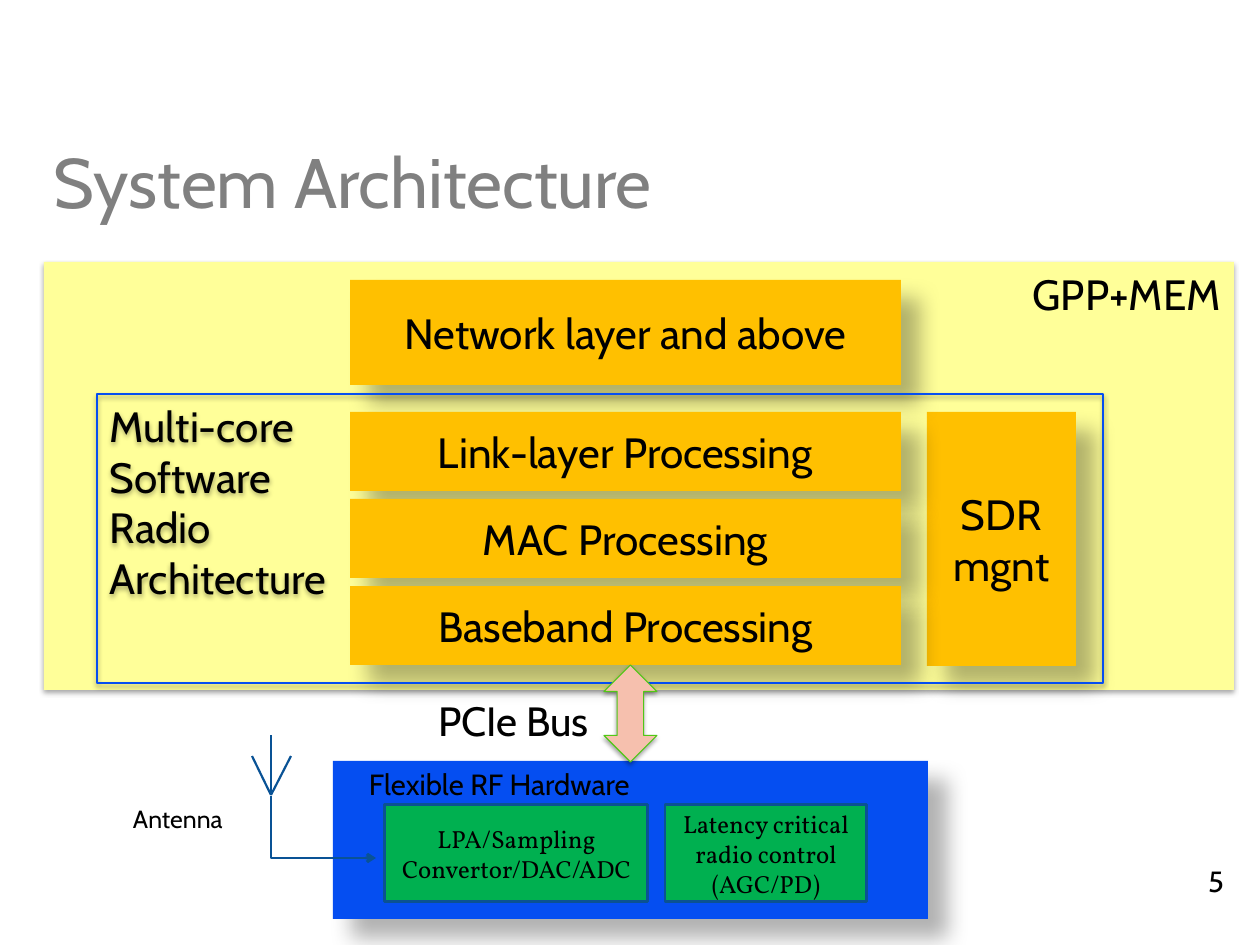
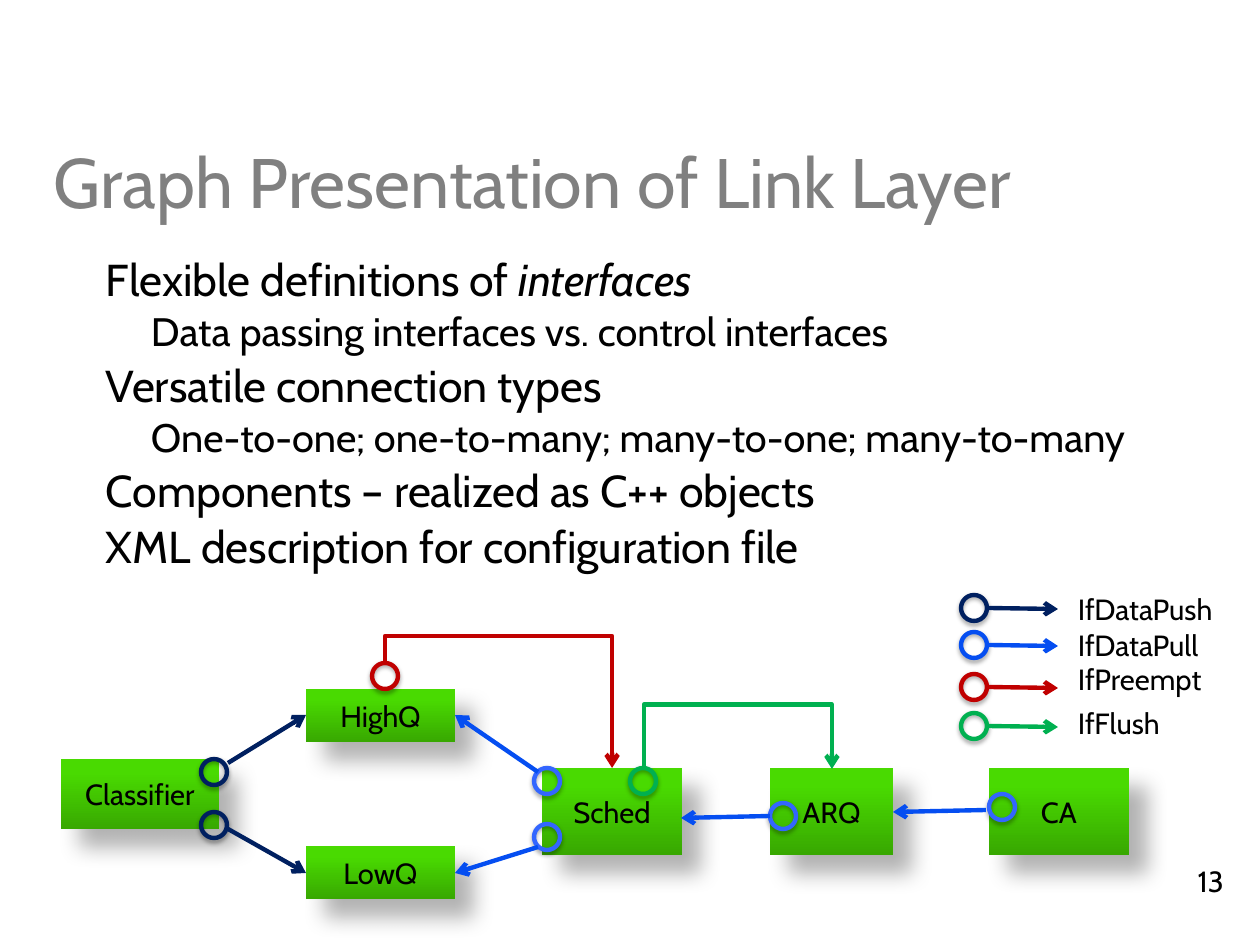
"""Build two slides on a software radio: system architecture and link-layer graph."""
from lxml.etree import SubElement
from pptx import Presentation
from pptx.dml.color import RGBColor
from pptx.enum.shapes import MSO_CONNECTOR as Wire, MSO_SHAPE as Preset
from pptx.enum.text import MSO_ANCHOR as Anchor, MSO_AUTO_SIZE as AutoSize, PP_ALIGN as Align
from pptx.oxml.ns import qn
from pptx.util import Pt

PX = 914400 / 105
TITLE_ONLY = 5
SANS, SERIF = "Cabin", "Vollkorn"

BLACK = RGBColor(0x00, 0x00, 0x00)
GRAY = RGBColor(0x80, 0x80, 0x80)
CREAM = RGBColor(0xFF, 0xFF, 0x99)
AMBER = RGBColor(0xFF, 0xC0, 0x00)
BLUE = RGBColor(0x05, 0x4E, 0xF1)
RING_BLUE = RGBColor(0x33, 0x66, 0xFF)
NAVY = RGBColor(0x00, 0x20, 0x60)
RED = RGBColor(0xC0, 0x00, 0x00)
GREEN = RGBColor(0x00, 0xB0, 0x50)
CHIP_EDGE = RGBColor(0x0B, 0x52, 0x92)
ANTENNA = RGBColor(0x09, 0x52, 0x95)
PINK = RGBColor(0xF6, 0xC0, 0xAE)
LIME_EDGE = RGBColor(0x51, 0xC7, 0x16)
LIME_DARK = RGBColor(0x38, 0xA8, 0x01)
LIME = RGBColor(0x49, 0xDA, 0x01)
LIME_GRADIENT = (LIME_DARK, LIME)

SOFT = dict(alpha=35, blur=3.1, dist=1.8, angle=90)
DEEP = dict(alpha=30, blur=15, dist=18, angle=45)
RING = 26

LAYERS = [
    ("Network layer and above", 280, 105),
    ("Link-layer Processing", 412, 79),
    ("MAC Processing", 499, 79),
    ("Baseband Processing", 586, 79),
]
CHIPS = [
    ("LPA/Sampling Convertor/DAC/ADC", (385, 805, 263, 97)),
    ("Latency critical radio control (AGC/PD)", (665, 805, 202, 97)),
]
ANTENNA_LINES = [((252, 756), (271, 795)), ((271, 735), (271, 794)), ((291, 756), (271, 795))]
POINTS = [
    (0, "Flexible definitions of ", "interfaces"),
    (1, "Data passing interfaces vs. control interfaces", ""),
    (0, "Versatile connection types", ""),
    (1, "One-to-one; one-to-many; many-to-one; many-to-many", ""),
    (0, "Components – realized as C++ objects", ""),
    (0, "XML description for configuration file", ""),
]
POINT_LEVELS = [dict(indent=53, size=30.6, before=9), dict(indent=98, size=27.2, before=8)]
BLOCKS = [
    ("Classifier", (61, 759, 158, 70)),
    ("HighQ", (306, 689, 149, 53)),
    ("LowQ", (306, 846, 149, 53)),
    ("Sched", (542, 768, 140, 87)),
    ("ARQ", (770, 768, 123, 87)),
    ("CA", (989, 768, 140, 87)),
]
LINKS = [
    ((201, 812), NAVY, (228, 829), (306, 873), NAVY),
    ((201, 759), NAVY, (228, 763), (306, 715), NAVY),
    ((534, 768), RING_BLUE, (538, 772), (455, 715), BLUE),
    ((534, 824), RING_BLUE, (538, 847), (455, 873), BLUE),
    ((770, 803), RING_BLUE, (770, 816), (681, 818), BLUE),
    ((989, 794), RING_BLUE, (986, 810), (893, 812), BLUE),
]
LOOPS = [
    ((630, 768), (644, 768), (832, 769), 704, GREEN),
    ((372, 663), (385, 663), (612, 768), 636, RED),
]
LEGEND = [
    ("IfDataPush", NAVY, 595, 586),
    ("IfDataPull", BLUE, 632, 622),
    ("IfPreempt", RED, 674, 656),
    ("IfFlush", GREEN, 713, 700),
]


def px(*lengths):
    return [round(length * PX) for length in lengths]


def add_span(para, text, *, size, color=BLACK, font=SANS, italic=False):
    span = para.add_run()
    span.text = text
    span.font.size = Pt(size)
    span.font.name = font
    span.font.italic = italic
    span.font.color.rgb = color


def set_frame(frame, inset=(13, 6), anchor=Anchor.TOP):
    frame.word_wrap = True
    frame.auto_size = AutoSize.NONE
    frame.vertical_anchor = anchor
    frame.margin_left, frame.margin_top = px(*inset)
    frame.margin_right, frame.margin_bottom = px(*inset)


def write(frame, text, align=Align.LEFT, spacing=None, **style):
    for index, line in enumerate(text.split("\n")):
        para = frame.add_paragraph() if index else frame.paragraphs[0]
        para.alignment = align
        para.line_spacing = spacing
        add_span(para, line, **style)


def add_label(page, text, at, inset=(10, 5), **style):
    box = page.shapes.add_textbox(*px(*at))
    set_frame(box.text_frame, inset)
    write(box.text_frame, text, **style)


def cast_shadow(shape, alpha, blur, dist, angle):
    effects = shape._element.spPr.find(qn("a:effectLst"))
    shadow = SubElement(effects, qn("a:outerShdw"), blurRad=str(Pt(blur)), dist=str(Pt(dist)),
                        dir=str(angle * 60000), algn="ctr", rotWithShape="0")
    color = SubElement(shadow, qn("a:srgbClr"), val=str(BLACK))
    SubElement(color, qn("a:alpha"), val=str(alpha * 1000))


def paint(fill, color):
    if color is None:
        fill.background()
    elif color is LIME_GRADIENT:
        fill.gradient()
        fill.gradient_angle = 90
        for stop, place, shade in zip(fill.gradient_stops, (0, 0.8), color):
            stop.position = place
            stop.color.rgb = shade
    else:
        fill.solid()
        fill.fore_color.rgb = color


def add_box(page, at, fill=None, line=None, width=1.5, shadow=None, preset=Preset.RECTANGLE,
            text="", anchor=Anchor.MIDDLE, align=Align.CENTER, **style):
    box = page.shapes.add_shape(preset, *px(*at))
    paint(box.fill, fill)
    paint(box.line.fill, line)
    if line is not None:
        box.line.width = Pt(width)
    box.shadow.inherit = False
    if shadow:
        cast_shadow(box, **shadow)
    if text:
        set_frame(box.text_frame, anchor=anchor)
        write(box.text_frame, text, align=align, **style)


def add_ring(page, corner, color):
    add_box(page, (*corner, RING, RING), line=color, width=3, shadow=SOFT, preset=Preset.OVAL)


def add_wire(page, start, end, color, width=3, arrow=True, kind=Wire.STRAIGHT):
    wire = page.shapes.add_connector(kind, *px(*start, *end))
    wire.line.color.rgb = color
    wire.line.width = Pt(width)
    properties = wire._element.spPr
    if arrow:
        SubElement(properties.find(qn("a:ln")), qn("a:tailEnd"), type="arrow")
    SubElement(properties, qn("a:effectLst"))
    return wire


def set_bend(wire, share):
    values = wire._element.spPr.find(qn("a:prstGeom")).find(qn("a:avLst"))
    SubElement(values, qn("a:gd"), name="adj1", fmla=f"val {round(share * 100000)}")


def add_loop(page, start, end, top, color):
    wire = add_wire(page, start, end, color, kind=Wire.ELBOW)
    run, drop = end[0] - start[0], end[1] - start[1]
    middle_x, middle_y = (start[0] + end[0]) / 2, (start[1] + end[1]) / 2
    wire.left, wire.top = px(middle_x - drop / 2, middle_y - run / 2)
    wire.width, wire.height = px(drop, run)
    frame = wire._element.spPr.find(qn("a:xfrm"))
    frame.set("rot", str(270 * 60000))
    frame.set("flipH", "1")
    set_bend(wire, (top - start[1]) / drop)


def add_page(deck, title, number):
    page = deck.slides.add_slide(deck.slide_layouts[TITLE_ONLY])
    heading = page.shapes.title
    heading.left, heading.top, heading.width, heading.height = px(54, 148, 1155, 77)
    set_frame(heading.text_frame, inset=(0, 0))
    write(heading.text_frame, title, spacing=0.9, size=48, color=GRAY)
    add_label(page, number, (974, 857, 263, 63), inset=(13, 6), align=Align.RIGHT, size=20)
    return page


def add_points(page):
    box = page.shapes.add_textbox(*px(53, 262, 1155, 333))
    frame = box.text_frame
    set_frame(frame, inset=(0, 0))
    for index, (level, plain, slanted) in enumerate(POINTS):
        look = POINT_LEVELS[level]
        para = frame.add_paragraph() if index else frame.paragraphs[0]
        para.line_spacing = 0.8
        para.space_before = Pt(look["before"] if index else 0)
        para._p.get_or_add_pPr().set("marL", str(px(look["indent"])[0]))
        add_span(para, plain, size=look["size"])
        if slanted:
            add_span(para, slanted, size=look["size"], italic=True)


def build_architecture(deck):
    page = add_page(deck, "System Architecture", "5")
    add_box(page, (44, 262, 1190, 428), CREAM, shadow=SOFT, text="GPP+MEM",
            anchor=Anchor.TOP, align=Align.RIGHT, size=29)
    add_box(page, (333, 761, 595, 158), BLUE, shadow=DEEP)
    add_label(page, "PCIe Bus", (428, 691, 195, 60), size=28)
    for text, at in CHIPS:
        add_box(page, at, GREEN, CHIP_EDGE, width=2, text=text, size=17, font=SERIF)
    add_label(page, "Antenna", (120, 798, 131, 43), inset=(13, 6), size=17)
    feed = add_wire(page, (271, 796), (376, 858), ANTENNA, width=2, kind=Wire.ELBOW)
    set_bend(feed, 0)
    for start, end in ANTENNA_LINES:
        add_wire(page, start, end, ANTENNA, width=1.5, arrow=False)
    add_box(page, (927, 412, 149, 254), AMBER, shadow=DEEP, text="SDR mgnt", size=29)
    add_label(page, "Flexible RF Hardware", (359, 761, 307, 46), size=20)
    for text, top, height in LAYERS:
        add_box(page, (350, top, 551, height), AMBER, shadow=DEEP, text=text, size=29)
    add_box(page, (97, 394, 1006, 289), line=BLUE, shadow=SOFT,
            text="Multi-core\nSoftware\nRadio\nArchitecture",
            anchor=Anchor.TOP, align=Align.LEFT, size=29)
    add_box(page, (604, 665, 53, 97), PINK, LIME_EDGE, width=0.75, shadow=SOFT,
            preset=Preset.UP_DOWN_ARROW)


def build_link_layer(deck):
    page = add_page(deck, "Graph Presentation of Link Layer", "13")
    add_points(page)
    for text, at in BLOCKS:
        add_box(page, at, LIME_GRADIENT, shadow=DEEP, text=text, size=20)
    for corner, ring_color, start, end, color in LINKS:
        add_ring(page, corner, ring_color)
        add_wire(page, start, end, color)
    for corner, start, end, top, color in LOOPS:
        add_ring(page, corner, color)
        add_loop(page, start, end, top, color)
    for text, color, ring_top, label_top in LEGEND:
        add_ring(page, (961, ring_top), color)
        add_wire(page, (987, ring_top + 13), (1058, ring_top + 14), color)
        add_label(page, text, (1068, label_top, 167, 46), size=20)


def main():
    deck = Presentation()
    deck.slide_width, deck.slide_height = px(1260, 945)
    build_architecture(deck)
    build_link_layer(deck)
    deck.save("out.pptx")


if __name__ == "__main__":
    main()
